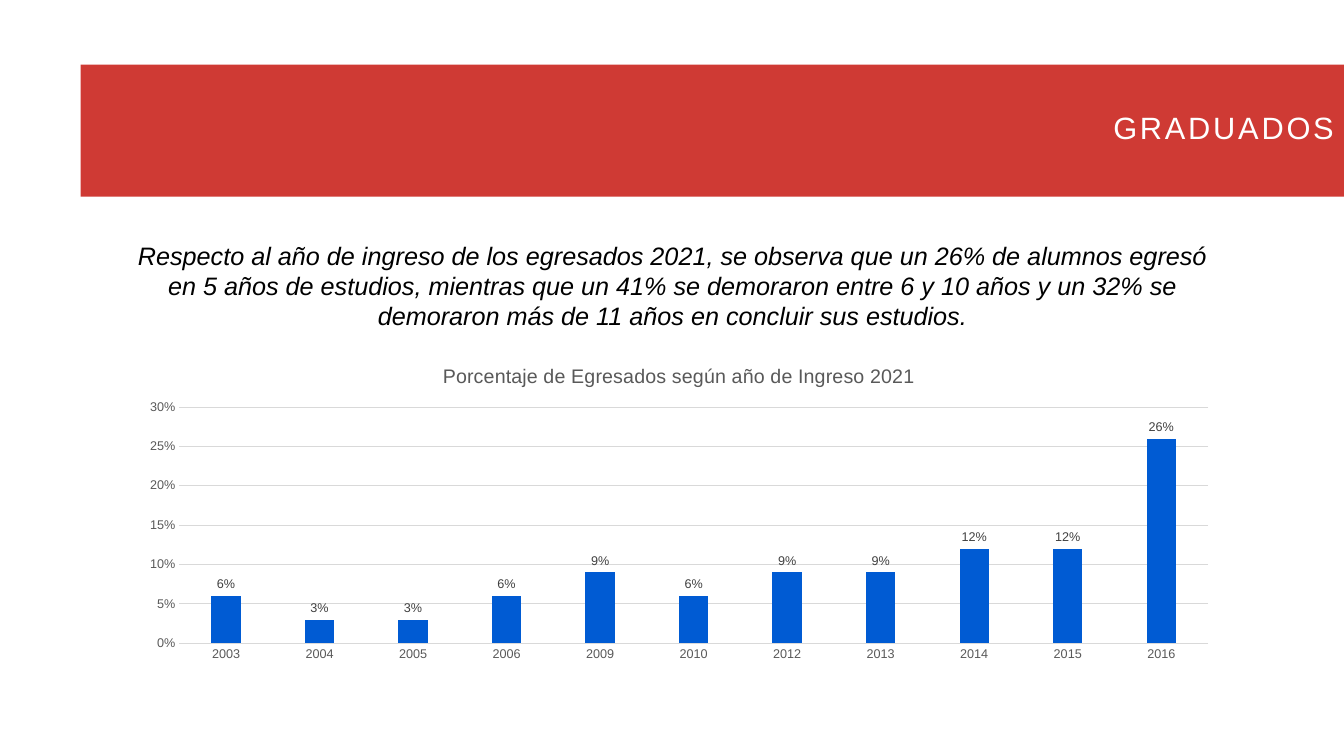
import pptx
import pptx.chart.data
import pptx.dml.color
import pptx.enum.chart
import pptx.enum.shapes
import pptx.enum.text
import pptx.util
from pptx.util import Inches

HEADING = "GRADUADOS"
SUMMARY = (
    "Respecto al año de ingreso de los egresados 2021, se observa que un 26% de "
    "alumnos egresó en 5 años de estudios, mientras que un 41% se demoraron entre "
    "6 y 10 años y un 32% se demoraron más de 11 años en concluir sus estudios."
)
CHART_TITLE = "Porcentaje de Egresados según año de Ingreso 2021"
GRADUATES_BY_YEAR = {
    "2003": 0.06, "2004": 0.03, "2005": 0.03, "2006": 0.06,
    "2009": 0.09, "2010": 0.06, "2012": 0.09, "2013": 0.09,
    "2014": 0.12, "2015": 0.12, "2016": 0.26,
}

THEME = {
    "font": "Arial",
    "banner": "CF3A34", "heading": "FFFFFF", "body": "000000",
    "bar": "005BD3", "axis": "595959", "grid": "D9D9D9", "label": "404040",
    "heading_size": 22, "body_size": 18, "title_size": 14, "axis_size": 9,
}


def color(name):
    return pptx.dml.color.RGBColor.from_string(THEME[name])


def style_font(font, size, color_name):
    font.name = THEME["font"]
    font.size = pptx.util.Pt(THEME[size])
    font.color.rgb = color(color_name)
    font.bold = False


def style_line(line):
    line.color.rgb = color("grid")
    line.width = pptx.util.Pt(0.75)


def add_banner(page):
    banner = page.shapes.add_shape(
        pptx.enum.shapes.MSO_SHAPE.RECTANGLE,
        Inches(0.8), Inches(0.64), Inches(12.53), Inches(1.31))
    banner.shadow.inherit = False
    banner.fill.solid()
    banner.fill.fore_color.rgb = color("banner")
    banner.line.fill.background()
    frame = banner.text_frame
    frame.text = HEADING
    frame.vertical_anchor = pptx.enum.text.MSO_ANCHOR.MIDDLE
    para = frame.paragraphs[0]
    para.alignment = pptx.enum.text.PP_ALIGN.RIGHT
    para.line_spacing = 0.8
    span = para.runs[0]
    style_font(span.font, "heading_size", "heading")
    span.font._element.set("spc", "200")  # letter spacing, hundredths of a point


def add_summary(page):
    box = page.shapes.add_textbox(
        Inches(1.14), Inches(2.33), Inches(11.06), Inches(1.01))
    box.text_frame.word_wrap = True
    box.text_frame.text = SUMMARY
    para = box.text_frame.paragraphs[0]
    para.alignment = pptx.enum.text.PP_ALIGN.CENTER
    style_font(para.runs[0].font, "body_size", "body")
    para.runs[0].font.italic = True


def add_graduates_chart(page):
    data = pptx.chart.data.CategoryChartData(number_format="0%")
    data.categories = list(GRADUATES_BY_YEAR)
    data.add_series("Egresados", list(GRADUATES_BY_YEAR.values()))
    chart = page.shapes.add_chart(
        pptx.enum.chart.XL_CHART_TYPE.COLUMN_CLUSTERED,
        Inches(1.27), Inches(3.45), Inches(10.93), Inches(3.18), data).chart
    chart.has_legend = False
    chart.font.name = THEME["font"]
    chart.has_title = True
    title = chart.chart_title
    title.text_frame.text = CHART_TITLE
    title.include_in_layout = False
    style_font(title.text_frame.paragraphs[0].runs[0].font, "title_size", "axis")

    for axis in (chart.category_axis, chart.value_axis):
        axis.major_tick_mark = pptx.enum.chart.XL_TICK_MARK.NONE
        axis.minor_tick_mark = pptx.enum.chart.XL_TICK_MARK.NONE
        style_font(axis.tick_labels.font, "axis_size", "axis")
    style_line(chart.category_axis.format.line)
    values = chart.value_axis
    values.format.line.fill.background()
    style_line(values.major_gridlines.format.line)
    values.minimum_scale, values.maximum_scale, values.major_unit = 0, 0.3, 0.05
    values.tick_labels.number_format = "0%"
    values.tick_labels.number_format_is_linked = False

    plot = chart.plots[0]
    plot.vary_by_categories = False
    plot.gap_width = 219
    plot.overlap = -27
    bars = plot.series[0]
    bars.format.fill.solid()
    bars.format.fill.fore_color.rgb = color("bar")
    labels = bars.data_labels
    labels.show_value = True
    labels.number_format = "0%"
    labels.number_format_is_linked = False
    labels.position = pptx.enum.chart.XL_LABEL_POSITION.OUTSIDE_END
    style_font(labels.font, "axis_size", "label")


def main():
    deck = pptx.Presentation()
    deck.slide_width = Inches(13.33)
    deck.slide_height = Inches(7.5)
    page = deck.slides.add_slide(deck.slide_layouts[6])
    add_banner(page)
    add_summary(page)
    add_graduates_chart(page)
    deck.save("out.pptx")


if __name__ == "__main__":
    main()
